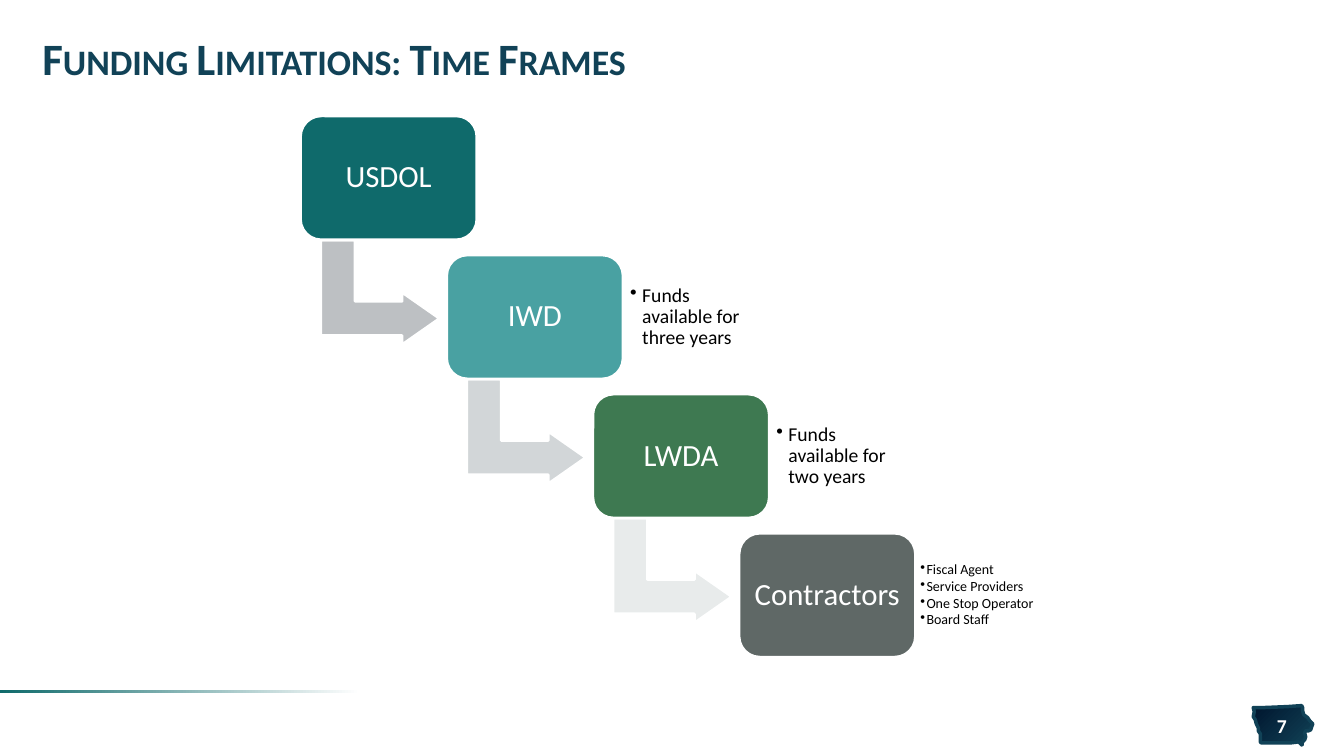
"""Build the funding time frames slide as a descending staircase of agencies."""
import dataclasses

import pptx
import pptx.dml.color
import pptx.enum.shapes
import pptx.enum.text
import pptx.oxml
import pptx.oxml.ns
import pptx.util
from pptx.util import Inches

SHAPES = pptx.enum.shapes.MSO_SHAPE
ALIGN = pptx.enum.text.PP_ALIGN
MIDDLE = pptx.enum.text.MSO_ANCHOR.MIDDLE


@dataclasses.dataclass(frozen=True)
class Theme:
    """Colours, type sizes and font of the slide."""
    font: str = "Calibri"
    navy: str = "114257"
    midnight: str = "00162E"
    teal: str = "0F6A6B"
    white: str = "FFFFFF"
    black: str = "000000"
    nodes: tuple = ("0F6A6B", "49A1A2", "3E7951", "5F6866")
    arrows: tuple = ("BDC0C3", "D2D6D8", "E8EBEB")
    title_size: float = 32
    node_size: float = 22
    note_size: float = 14
    list_size: float = 10
    number_size: float = 14


class StairSlide:
    """Draw styled elements on one slide."""

    def __init__(self, deck, theme):
        """Add a title-only slide to the deck."""
        self.theme = theme
        self.slide = deck.slides.add_slide(deck.slide_layouts[5])
        self.shapes = self.slide.shapes

    def color(self, value):
        """Turn a hex value into a colour."""
        return pptx.dml.color.RGBColor.from_string(value)

    def add_span(self, para, text, size, color, bold=False, **marks):
        """Add one styled run to a paragraph."""
        span = para.add_run()
        span.text = text
        span.font.name = self.theme.font
        span.font.size = pptx.util.Pt(size)
        span.font.bold = bold
        span.font.color.rgb = self.color(color)
        for name, value in marks.items():
            span._r.get_or_add_rPr().set(name, value)

    def prepare(self, box, side=0.1, edge=0.05):
        """Wrap and centre the text of a box vertically, with given insets."""
        frame = box.text_frame
        frame.auto_size = pptx.enum.text.MSO_AUTO_SIZE.NONE
        frame.word_wrap = True
        frame.vertical_anchor = MIDDLE
        frame.margin_left = frame.margin_right = Inches(side)
        frame.margin_top = frame.margin_bottom = Inches(edge)
        return frame

    def outline(self, shape, color, width):
        """Set the outline of a shape and drop its shadow."""
        shape.shadow.inherit = False
        shape.line.color.rgb = self.color(color)
        shape.line.width = pptx.util.Pt(width)

    def gradient(self, shape, stops, angle):
        """Fill a shape with a two-colour gradient."""
        shape.fill.gradient()
        shape.fill.gradient_angle = angle
        for stop, (position, color) in zip(shape.fill.gradient_stops, stops):
            stop.position = position
            stop.color.rgb = self.color(color)

    def title(self, text, left, top, width, height):
        """Place the title in small capitals."""
        box = self.shapes.title
        box.left, box.top = Inches(left), Inches(top)
        box.width, box.height = Inches(width), Inches(height)
        para = self.prepare(box).paragraphs[0]
        para.alignment = ALIGN.LEFT
        para.line_spacing = 0.85
        self.add_span(para, text, self.theme.title_size, self.theme.navy, True, cap="small")

    def solid(self, kind, left, top, width, height, fill):
        """Draw a filled shape with a white outline."""
        shape = self.shapes.add_shape(
            kind, Inches(left), Inches(top), Inches(width), Inches(height))
        shape.fill.solid()
        shape.fill.fore_color.rgb = self.color(fill)
        self.outline(shape, self.theme.white, 2)
        return shape

    def arrow(self, left, top, fill):
        """Draw the bent arrow that leads down to the next step."""
        shape = self.solid(SHAPES.BENT_UP_ARROW, left, top, 1.04, 1.18, fill)
        shape.rotation = 90
        for index, value in enumerate((0.328, 0.25, 0.358)):
            shape.adjustments[index] = value

    def node(self, text, left, top, width, height, fill):
        """Draw a labelled step."""
        shape = self.solid(SHAPES.ROUNDED_RECTANGLE, left, top, width, height, fill)
        shape.adjustments[0] = 0.167
        para = self.prepare(shape, 0.05).paragraphs[0]
        para.alignment = ALIGN.CENTER
        para.line_spacing = 0.9
        self.add_span(para, text, self.theme.node_size, self.theme.white)

    def bullets(self, items, left, top, size, inset, indent):
        """Add the bulleted notes beside a step."""
        box = self.shapes.add_textbox(Inches(left), Inches(top), Inches(1.27), Inches(0.99))
        frame = self.prepare(box, inset, inset)
        for index, item in enumerate(items):
            para = frame.add_paragraph() if index else frame.paragraphs[0]
            properties = para._p.get_or_add_pPr()
            properties.set("marL", str(Inches(indent)))
            properties.set("indent", str(-Inches(indent)))
            bullet = pptx.oxml.parse_xml(
                f'<a:buChar {pptx.oxml.ns.nsdecls("a")} char="•"/>')
            properties.append(bullet)
            para.level = 1
            para.line_spacing = 0.9
            para.space_after = pptx.util.Pt(1.2)
            self.add_span(para, item, size, self.theme.black)

    def rule(self, left, top, width, height):
        """Draw the fading footer rule."""
        shape = self.shapes.add_shape(
            SHAPES.RECTANGLE, Inches(left), Inches(top), Inches(width), Inches(height))
        shape.shadow.inherit = False
        shape.line.fill.background()
        self.gradient(shape, ((0.06, self.theme.white), (1, self.theme.teal)), 180)

    def badge(self, points, number):
        """Draw the state outline with the slide number on it."""
        corners = [(Inches(x), Inches(y)) for x, y in points]
        builder = self.shapes.build_freeform(*corners[0], scale=1.0)
        builder.add_line_segments(corners[1:], close=True)
        state = builder.convert_to_shape()
        self.outline(state, self.theme.navy, 2.5)
        self.gradient(state, ((0, self.theme.midnight), (1, self.theme.navy)), 315)
        box = self.shapes.add_textbox(Inches(12.46), Inches(7.08), Inches(0.51), Inches(0.23))
        para = self.prepare(box, 0).paragraphs[0]
        para.alignment = ALIGN.CENTER
        self.add_span(para, number, self.theme.number_size, self.theme.white, True, spc="50")


STATE = (
    (12.91, 7), (12.77, 7.01), (12.53, 7.02), (12.43, 7.02), (12.44, 7.06),
    (12.43, 7.11), (12.45, 7.14), (12.46, 7.18), (12.48, 7.22), (12.48, 7.25),
    (12.5, 7.28), (12.5, 7.36), (12.51, 7.37), (12.65, 7.37), (12.8, 7.37),
    (12.88, 7.36), (12.91, 7.39), (12.92, 7.38), (12.91, 7.37), (12.94, 7.34),
    (12.95, 7.31), (12.94, 7.27), (12.95, 7.25), (12.98, 7.25), (13, 7.24),
    (13.01, 7.21), (13.02, 7.18), (12.99, 7.15), (12.97, 7.12), (12.93, 7.09),
    (12.92, 7.05), (12.92, 7.02))

STEPS = (
    ("USDOL", ()),
    ("IWD", ("Funds available for three years",)),
    ("LWDA", ("Funds available for two years",)),
    ("Contractors", ("Fiscal Agent", "Service Providers", "One Stop Operator", "Board Staff")))


def main():
    """Build and save the deck."""
    deck = pptx.Presentation()
    deck.slide_width, deck.slide_height = Inches(13.33), Inches(7.5)
    theme = Theme()
    page = StairSlide(deck, theme)
    page.badge(STATE, "7")
    page.rule(0, 6.85, 3.8, 0.03)
    page.title("Funding Limitations: Time Frames", 0.32, 0.24, 12.69, 0.75)
    width, height = 1.75, 1.23
    for index, (name, notes) in enumerate(STEPS):
        left, top = 2.98 + 1.45 * index, 1.15 + 1.38 * index
        if index < len(theme.arrows):
            page.arrow(left + 0.27, top + 1.16, theme.arrows[index])
        page.node(name, left, top, width, height, theme.nodes[index])
        if len(notes) > 1:
            page.bullets(notes, left + width, top + 0.12, theme.list_size, 0.05, 0.06)
        elif notes:
            page.bullets(notes, left + width, top + 0.12, theme.note_size, 0.07, 0.12)
    deck.save("out.pptx")


if __name__ == "__main__":
    main()
